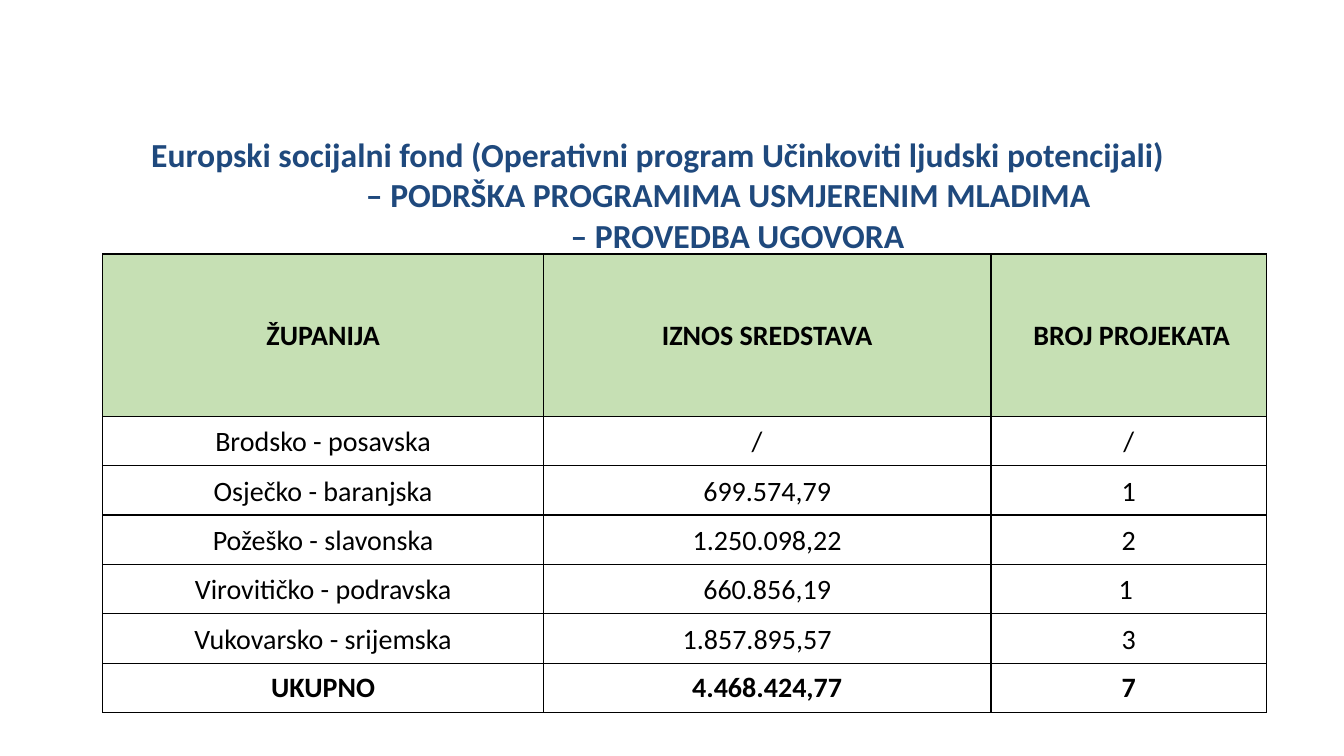
from dataclasses import dataclass

from lxml import etree
from pptx import Presentation
from pptx.dml.color import RGBColor
from pptx.enum.text import MSO_ANCHOR, MSO_AUTO_SIZE, PP_ALIGN
from pptx.oxml.ns import qn
from pptx.util import Inches, Pt

LEFT, CENTER = PP_ALIGN.LEFT, PP_ALIGN.CENTER
MIDDLE, TOP = MSO_ANCHOR.MIDDLE, MSO_ANCHOR.TOP
NO_AUTOFIT = MSO_AUTO_SIZE.NONE
TITLE_ONLY = 5


@dataclass(frozen=True)
class Theme:
    font: str = "Calibri"
    title_size: int = 24
    table_size: int = 20
    border_width: int = 1
    title_color: str = "1F497D"
    text_color: str = "000000"
    border_color: str = "000000"
    header_fill: str = "C6E0B4"


THEME = Theme()

# Each title line with its left indent in inches
TITLE_LINES = [
    ("Europski socijalni fond (Operativni program Učinkoviti ljudski potencijali)", 0),
    ("– PODRŠKA PROGRAMIMA USMJERENIM MLADIMA", 2.13),
    ("– PROVEDBA UGOVORA", 4.16),
]

COUNTY_ROWS = [
    ("ŽUPANIJA", "IZNOS SREDSTAVA", "BROJ PROJEKATA"),
    ("Brodsko - posavska", "/", "/"),
    ("Osječko - baranjska", "699.574,79", "1"),
    ("Požeško - slavonska", "1.250.098,22", "2"),
    ("Virovitičko - podravska", "660.856,19", "1"),
    ("Vukovarsko - srijemska", "1.857.895,57", "3"),
    ("UKUPNO", "4.468.424,77", "7"),
]
COLUMN_WIDTHS = (4.37, 4.44, 2.73)
HEADER_HEIGHT, ROW_HEIGHT = 1.61, 0.49

# Left and right margins of cells set off centre, by row and column
CELL_MARGINS = {
    (0, 2): (0.06, 0),
    (1, 1): (0, 0.2),
    (4, 2): (0, 0.06),
    (5, 1): (0, 0.2),
}


def format_text(paragraph, size, color, bold):
    for run in paragraph.runs:
        run.font.name = THEME.font
        run.font.size = Pt(size)
        run.font.bold = bold
        run.font.color.rgb = RGBColor.from_string(color)


def add_title(slide, left, top, width, height):
    title = slide.shapes.title
    title.left, title.top = Inches(left), Inches(top)
    title.width, title.height = Inches(width), Inches(height)
    text_frame = title.text_frame
    text_frame.text = "\n".join(line for line, _ in TITLE_LINES)
    text_frame.word_wrap = True
    text_frame.auto_size = NO_AUTOFIT
    text_frame.vertical_anchor = TOP
    for paragraph, (_, indent) in zip(text_frame.paragraphs, TITLE_LINES):
        paragraph.alignment = LEFT
        paragraph.line_spacing = 1.0
        paragraph.space_before = Pt(0)
        paragraph._p.get_or_add_pPr().set("marL", str(Inches(indent)))
        format_text(paragraph, THEME.title_size, THEME.title_color, True)


def add_borders(cell):
    properties = cell._tc.get_or_add_tcPr()
    for side in ("lnL", "lnR", "lnT", "lnB"):
        line = etree.SubElement(properties, qn(f"a:{side}"), w=str(Pt(THEME.border_width)))
        fill = etree.SubElement(line, qn("a:solidFill"))
        etree.SubElement(fill, qn("a:srgbClr"), val=THEME.border_color)


def fill_cell(cell, text, margins, is_header, is_total):
    cell.text = text
    cell.vertical_anchor = MIDDLE
    cell.margin_left, cell.margin_right = map(Inches, margins)
    cell.margin_top = cell.margin_bottom = 0
    add_borders(cell)
    if is_header:
        cell.fill.solid()
        cell.fill.fore_color.rgb = RGBColor.from_string(THEME.header_fill)
    else:
        cell.fill.background()
    paragraph = cell.text_frame.paragraphs[0]
    paragraph.alignment = CENTER
    paragraph.line_spacing = 1.0 if is_total else 1.07
    format_text(paragraph, THEME.table_size, THEME.text_color, is_header or is_total)


def add_county_table(slide, left, top):
    last_row = len(COUNTY_ROWS) - 1
    height = HEADER_HEIGHT + last_row * ROW_HEIGHT
    table = slide.shapes.add_table(
        len(COUNTY_ROWS), len(COLUMN_WIDTHS),
        Inches(left), Inches(top), Inches(sum(COLUMN_WIDTHS)), Inches(height),
    ).table
    table.first_row = table.horz_banding = False
    for column, width in zip(table.columns, COLUMN_WIDTHS):
        column.width = Inches(width)
    for row_index, texts in enumerate(COUNTY_ROWS):
        is_header = row_index == 0
        table.rows[row_index].height = Inches(HEADER_HEIGHT if is_header else ROW_HEIGHT)
        for column_index, text in enumerate(texts):
            margins = CELL_MARGINS.get((row_index, column_index), (0, 0))
            fill_cell(table.cell(row_index, column_index), text, margins,
                      is_header, row_index == last_row)


def main():
    presentation = Presentation()
    presentation.slide_width, presentation.slide_height = Inches(13.33), Inches(7.5)
    slide = presentation.slides.add_slide(presentation.slide_layouts[TITLE_ONLY])
    add_title(slide, 1.4, 1.28, 10.72, 1.31)
    add_county_table(slide, 1.02, 2.52)
    presentation.save("out.pptx")


if __name__ == "__main__":
    main()
